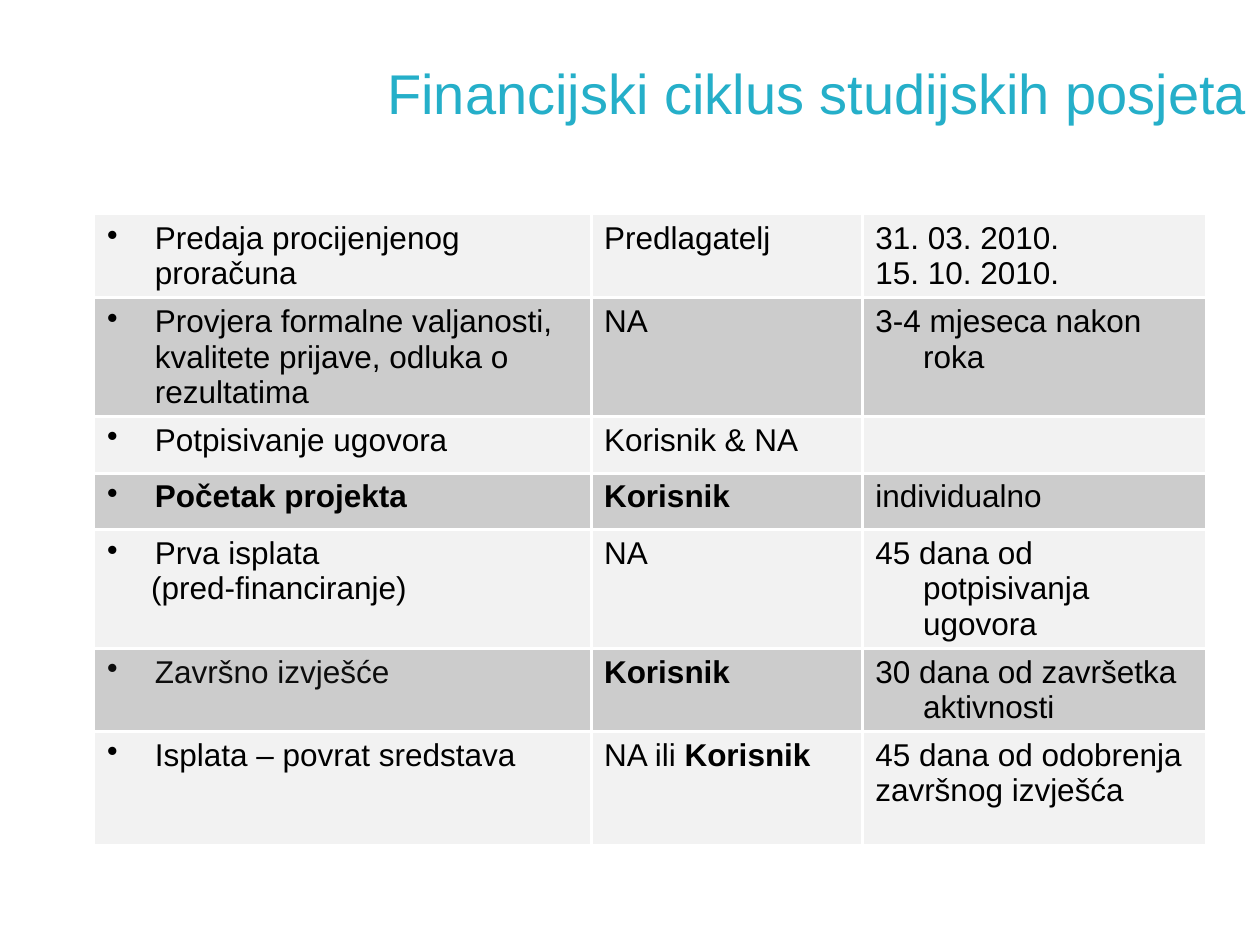
import pptx
import pptx.util
import pptx.dml.color
import pptx.enum.text
import pptx.oxml
import pptx.oxml.ns

Pt = pptx.util.Pt
HANG = 27.36
WIDTHS = [284, 155, 196]
HEIGHTS = [32.4] * 6 + [64.8]
BANDS = ["F2F2F2", "CCCCCC"]
BODY = {"name": "Arial", "size": Pt(18), "bold": False}
ROWS = [
    [["Predaja procijenjenog proračuna"], ["Predlagatelj"],
     ["31. 03. 2010.", "15. 10. 2010."]],
    [["Provjera formalne valjanosti, kvalitete prijave, odluka o rezultatima"],
     ["NA"], ["3-4 mjeseca nakon roka"]],
    [["Potpisivanje ugovora"], ["Korisnik & NA"], []],
    [["*Početak projekta"], ["*Korisnik"], ["individualno"]],
    [["Prva isplata", "(pred-financiranje)"], ["NA"],
     ["45 dana od potpisivanja ugovora"]],
    [["Završno izvješće"], ["*Korisnik"], ["30 dana od završetka aktivnosti"]],
    [["Isplata – povrat sredstava"], ["NA ili *Korisnik"],
     ["45 dana od odobrenja završnog izvješća"]],
]


def paint(text):
    return pptx.dml.color.RGBColor.from_string(text)


def style(font, form, hue):
    for key, val in form.items():
        setattr(font, key, val)
    font.color.rgb = paint(hue)


def indent(para, left, first, mark=None):
    props = para._p.get_or_add_pPr()
    props.set("marL", str(Pt(left)))
    props.set("indent", str(Pt(first)))
    tag = f'buChar char="{mark}"' if mark else "buNone"
    space = pptx.oxml.ns.nsdecls("a")
    props.append(pptx.oxml.parse_xml(f"<a:{tag.split()[0]} {space} {tag[len(tag.split()[0]):]}/>"))


def border(cell, sides):
    props = cell._tc.get_or_add_tcPr()
    space = pptx.oxml.ns.nsdecls("a")
    for side in sides:
        props.append(pptx.oxml.parse_xml(
            f'<a:ln{side} {space} w="{Pt(2)}"><a:solidFill>'
            f'<a:srgbClr val="FFFFFF"/></a:solidFill></a:ln{side}>'))


def write(para, text, hue):
    for num, part in enumerate(text.split("*")):
        if part:
            run = para.add_run()
            run.text = part
            style(run.font, {**BODY, "bold": num == 1}, hue)


def fill_cell(cell, lines, row, col):
    border(cell, [side for side, show in [
        ("L", col > 0), ("R", col < len(WIDTHS) - 1),
        ("T", row > 0), ("B", row < len(ROWS) - 1)] if show])
    cell.fill.solid()
    cell.fill.fore_color.rgb = paint(BANDS[row % 2])
    frame = cell.text_frame
    hue = "0D0D0D" if (row, col) == (5, 0) else "000000"
    for num, text in enumerate(lines):
        para = frame.add_paragraph() if num else frame.paragraphs[0]
        if col == 0 and num:
            indent(para, 25.2, 0)
        elif (row, col) != (6, 2):
            indent(para, HANG, -HANG, "•" if col == 0 else None)
        write(para, text, hue)
    if not lines:
        style(frame.paragraphs[0].font, BODY, hue)


def add_title(slide, left, top, width, height):
    title = slide.shapes.title
    box = {"left": left, "top": top, "width": width, "height": height}
    for key, val in box.items():
        setattr(title, key, Pt(val))
    frame = title.text_frame
    frame.text = "Financijski ciklus studijskih posjeta"
    frame.word_wrap = True
    frame.vertical_anchor = pptx.enum.text.MSO_ANCHOR.MIDDLE
    para = frame.paragraphs[0]
    para.alignment = pptx.enum.text.PP_ALIGN.RIGHT
    style(para.runs[0].font, {"name": "Arial", "size": Pt(32)}, "25AFC9")


def add_cycle(slide, left, top):
    grid = slide.shapes.add_table(
        len(ROWS), len(WIDTHS), Pt(left), Pt(top),
        Pt(sum(WIDTHS)), Pt(sum(HEIGHTS))).table
    grid.first_row = False
    grid.horz_banding = False
    for col, width in enumerate(WIDTHS):
        grid.columns[col].width = Pt(width)
    for row, cells in enumerate(ROWS):
        grid.rows[row].height = Pt(HEIGHTS[row])
        for col, lines in enumerate(cells):
            fill_cell(grid.cell(row, col), lines, row, col)


def main():
    deck = pptx.Presentation()
    deck.slide_width, deck.slide_height = Pt(720), Pt(540)
    slide = deck.slides.add_slide(deck.slide_layouts[5])
    add_title(slide, 194.4, -16.5, 525.6, 138)
    add_cycle(slide, 54, 122.7)
    deck.save("out.pptx")


if __name__ == "__main__":
    main()
